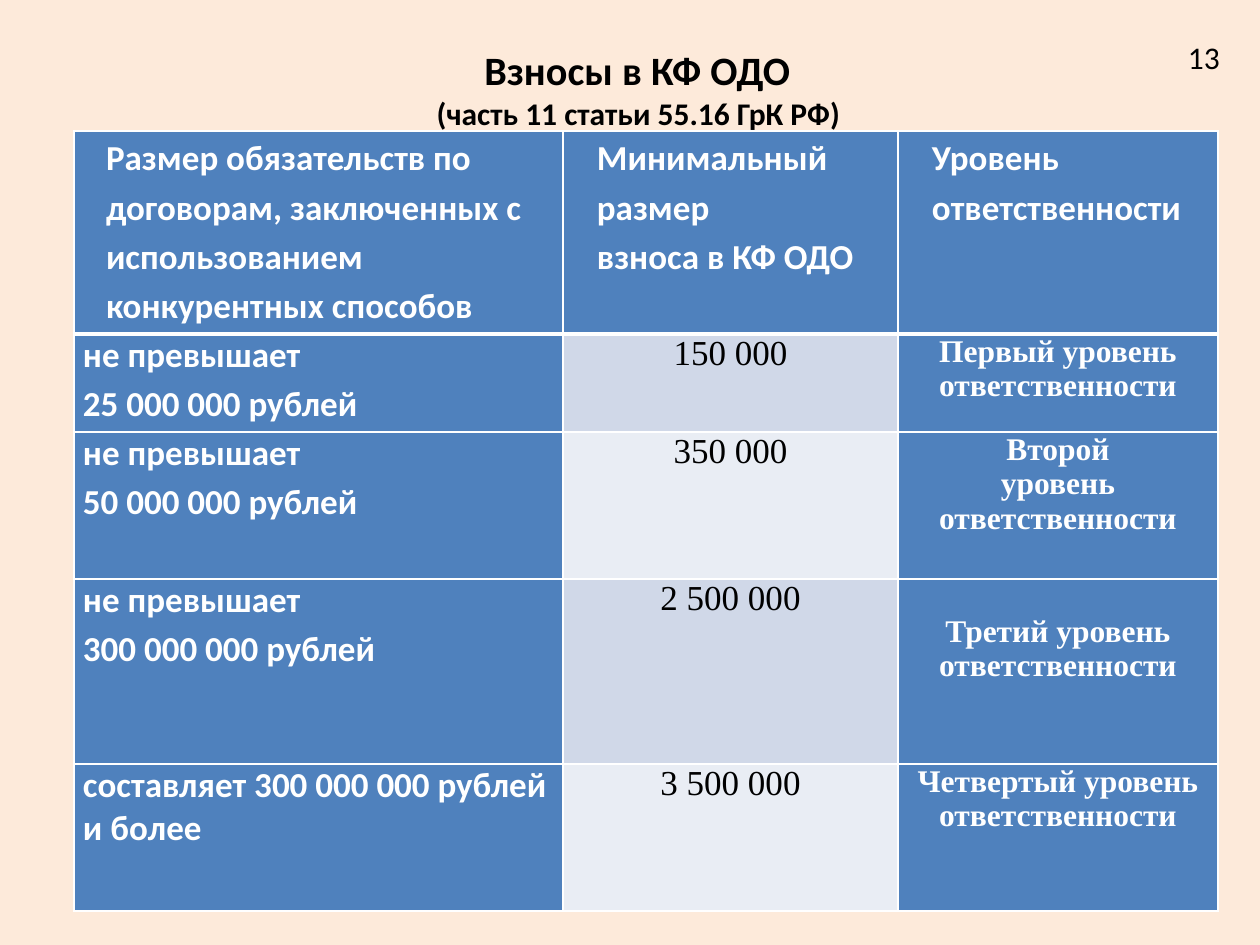
from lxml.etree import SubElement
from pptx import Presentation
from pptx.dml.color import RGBColor as RGB
from pptx.enum.text import PP_ALIGN as Align
from pptx.oxml.ns import qn
from pptx.util import Pt

PX = 914400 // 126
INK = {"back": "FDEADA", "blue": "4F81BD", "dark": "D0D8E8",
       "pale": "E9EDF4", "white": "FFFFFF", "black": "000000"}
SANS, SERIF = "Calibri", "Times New Roman"
COLS = [489, 335, 320]
TALL = [203, 98, 147, 185, 147]
HEADS = [
    (["Размер обязательств по", "договорам, заключенных с",
      "использованием", "конкурентных способов"], 32),
    (["Минимальный", "размер", "взноса в КФ ОДО"], 34),
    (["Уровень", "ответственности"], 34),
]
ROWS = [
    (["не превышает", "25 000 000 рублей"], "150 000",
     ["Первый уровень ответственности"], 0),
    (["не превышает", "50 000 000 рублей"], "350 000",
     ["Второй", "уровень ответственности"], 0),
    (["не превышает", "300 000 000 рублей"], "2 500 000",
     ["Третий уровень ответственности"], 35),
    (["составляет 300 000 000 рублей и более"], "3 500 000",
     ["Четвертый уровень ответственности"], 0),
]


def tint(fill, ink):
    """Make a fill solid in a named colour."""
    fill.solid()
    fill.fore_color.rgb = RGB.from_string(INK[ink])


def write(frame, lines, size, ink="white", face=SANS, bold=True,
          align=Align.LEFT, lead=None, gap=0):
    """Write one paragraph for each line."""
    for i, line in enumerate(lines):
        para = frame.add_paragraph() if i else frame.paragraphs[0]
        para.text = line
        para.alignment = align
        if lead:
            para.line_spacing = lead
        if i and gap:
            para.space_before = Pt(gap)
        font = para.font
        font.size, font.name, font.bold = Pt(size), face, bold
        tint(font.fill, ink)


def label(slide, box, text, size, **look):
    """Add a text box without insets."""
    frame = slide.shapes.add_textbox(*(n * PX for n in box)).text_frame
    frame.word_wrap = True
    frame.margin_left = frame.margin_right = 0
    frame.margin_top = frame.margin_bottom = 0
    write(frame, [text], size, ink="black", **look)


def edge(cell, top, base):
    """Draw white cell borders with given top and bottom widths."""
    props = cell._tc.get_or_add_tcPr()
    for side, width in zip("LRTB", (1, 1, top, base)):
        line = SubElement(props, qn(f"a:ln{side}"), w=str(Pt(width)))
        fill = SubElement(line, qn("a:solidFill"))
        SubElement(fill, qn("a:srgbClr"), val=INK["white"])


def put(cell, lines, size, fill="blue", left=0, top=0, **look):
    """Fill a cell with text and colour."""
    cell.margin_left, cell.margin_top = left * PX, top * PX
    cell.margin_right = cell.margin_bottom = 0
    tint(cell.fill, fill)
    write(cell.text_frame, lines, size, **look)


def grid(slide):
    """Add the table of fees."""
    box = (74, 131, sum(COLS), sum(TALL))
    table = slide.shapes.add_table(
        len(TALL), len(COLS), *(n * PX for n in box)).table
    table.first_row = table.horz_banding = False
    for col, wide in zip(table.columns, COLS):
        col.width = wide * PX
    for i, (row, tall) in enumerate(zip(table.rows, TALL)):
        row.height = tall * PX
        for cell in row.cells:
            edge(cell, 3 if i == 1 else 1, 3 if i == 0 else 1)
    for j, (lines, left) in enumerate(HEADS):
        put(table.cell(0, j), lines, 20, left=left, lead=1.15)
    for i, (duty, fee, level, top) in enumerate(ROWS, 1):
        put(table.cell(i, 0), duty, 20, left=9, gap=3.6)
        put(table.cell(i, 1), [fee], 20, fill="dark" if i % 2 else "pale",
            ink="black", face=SERIF, bold=False, align=Align.CENTER)
        put(table.cell(i, 2), level, 18, top=top, face=SERIF,
            align=Align.CENTER)


def main():
    """Build and save the slide."""
    deck = Presentation()
    deck.slide_width, deck.slide_height = 1260 * PX, 945 * PX
    slide = deck.slides.add_slide(deck.slide_layouts[6])
    tint(slide.background.fill, "back")
    label(slide, (299, 45, 677, 49), "Взносы в КФ ОДО", 23,
          align=Align.CENTER)
    label(slide, (411, 94, 455, 38), "(часть 11 статьи 55.16 ГрК РФ)", 18,
          align=Align.CENTER)
    grid(slide)
    label(slide, (1188, 38, 36, 38), "13", 18, bold=False)
    deck.save("out.pptx")


if __name__ == "__main__":
    main()
